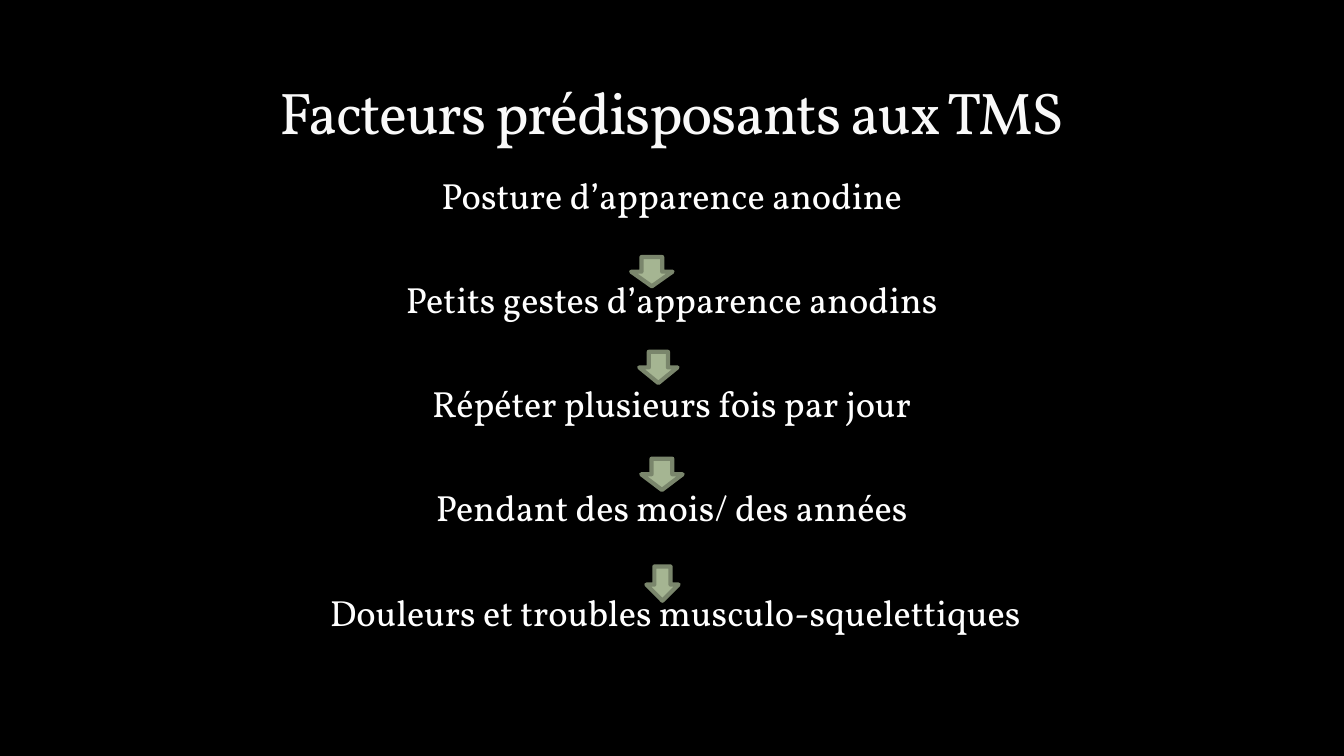
from dataclasses import dataclass

from lxml import etree
from pptx import Presentation
from pptx.dml.color import RGBColor
from pptx.enum.shapes import MSO_SHAPE
from pptx.enum.text import MSO_ANCHOR, MSO_AUTO_SIZE, PP_ALIGN
from pptx.oxml.ns import qn
from pptx.slide import Slide
from pptx.text.text import Font
from pptx.util import Inches, Pt

DOWN_ARROW = MSO_SHAPE.DOWN_ARROW
CENTER = PP_ALIGN.CENTER
TITLE_ONLY = 5

SLIDE_WIDTH, SLIDE_HEIGHT = Inches(13.33), Inches(7.5)


@dataclass(frozen=True)
class Theme:
    font: str = "Vollkorn"
    background: RGBColor = RGBColor(0x00, 0x00, 0x00)
    title: RGBColor = RGBColor(0xF9, 0xF9, 0xF9)
    title_outline: str = "3C4422"
    body: RGBColor = RGBColor(0xFF, 0xFF, 0xFF)
    arrow: RGBColor = RGBColor(0xA5, 0xB5, 0x92)
    arrow_edge: RGBColor = RGBColor(0x7A, 0x86, 0x6C)
    title_size: Pt = Pt(42)
    body_size: Pt = Pt(26)
    body_line: Pt = Pt(31.2)
    space_before: Pt = Pt(6)
    space_after: Pt = Pt(37.2)
    arrow_edge_width: Pt = Pt(3)


@dataclass(frozen=True)
class Area:
    """A box given as percentages of the slide's width and height."""
    left: float
    top: float
    width: float
    height: float

    def box(self) -> tuple[int, int, int, int]:
        return (int(SLIDE_WIDTH * self.left / 100), int(SLIDE_HEIGHT * self.top / 100),
                int(SLIDE_WIDTH * self.width / 100), int(SLIDE_HEIGHT * self.height / 100))


THEME = Theme()
TITLE = "Facteurs prédisposants aux TMS"
TITLE_AREA = Area(5, 2.22, 90, 17.78)
STEPS_AREA = Area(5, 22.22, 90, 66.67)
STEPS = (
    "Posture d’apparence anodine",
    "Petits gestes d’apparence anodins",
    "Répéter plusieurs fois par jour",
    "Pendant des mois/ des années",
    " Douleurs et troubles musculo-squelettiques",
)
ARROW_AREAS = (
    Area(46.96, 34, 3.08, 3.87),
    Area(47.56, 46.53, 2.85, 4.13),
    Area(47.71, 60.67, 3.08, 4.13),
    Area(48.09, 74.93, 2.4, 4.53),
)


def style_font(font: Font, size: Pt, color: RGBColor) -> None:
    font.name = THEME.font
    font.size = size
    font.color.rgb = color


def add_title(slide: Slide) -> None:
    title = slide.shapes.title
    title.left, title.top, title.width, title.height = TITLE_AREA.box()
    frame = title.text_frame
    frame.text = TITLE
    frame.word_wrap = True
    frame.auto_size = MSO_AUTO_SIZE.NONE
    frame.vertical_anchor = MSO_ANCHOR.BOTTOM
    heading = frame.paragraphs[0]
    heading.alignment = CENTER
    style_font(heading.font, THEME.title_size, THEME.title)
    outline_and_tighten(heading.runs[0].font)


def outline_and_tighten(font: Font) -> None:
    """Give a run a faint hairline outline and closer letters."""
    properties = font._element
    properties.set("spc", "-100")
    outline = etree.Element(qn("a:ln"), w=str(Pt(0.25)))
    fill = etree.SubElement(outline, qn("a:solidFill"))
    color = etree.SubElement(fill, qn("a:srgbClr"), val=THEME.title_outline)
    etree.SubElement(color, qn("a:alpha"), val="25000")
    properties.insert(0, outline)


def add_steps(slide: Slide) -> None:
    frame = slide.shapes.add_textbox(*STEPS_AREA.box()).text_frame
    frame.word_wrap = True
    for index, step in enumerate(STEPS):
        line = frame.add_paragraph() if index else frame.paragraphs[0]
        line.text = step
        line.alignment = CENTER
        line.line_spacing = THEME.body_line
        line.space_before = THEME.space_before
        line.space_after = THEME.space_after
        style_font(line.font, THEME.body_size, THEME.body)


def add_arrow(slide: Slide, area: Area) -> None:
    arrow = slide.shapes.add_shape(DOWN_ARROW, *area.box())
    arrow.shadow.inherit = False
    arrow.fill.solid()
    arrow.fill.fore_color.rgb = THEME.arrow
    arrow.line.color.rgb = THEME.arrow_edge
    arrow.line.width = THEME.arrow_edge_width


def main() -> None:
    deck = Presentation()
    deck.slide_width, deck.slide_height = SLIDE_WIDTH, SLIDE_HEIGHT
    slide = deck.slides.add_slide(deck.slide_layouts[TITLE_ONLY])
    slide.background.fill.solid()
    slide.background.fill.fore_color.rgb = THEME.background
    add_title(slide)
    add_steps(slide)
    for area in ARROW_AREAS:
        add_arrow(slide, area)
    deck.save("out.pptx")


if __name__ == "__main__":
    main()
